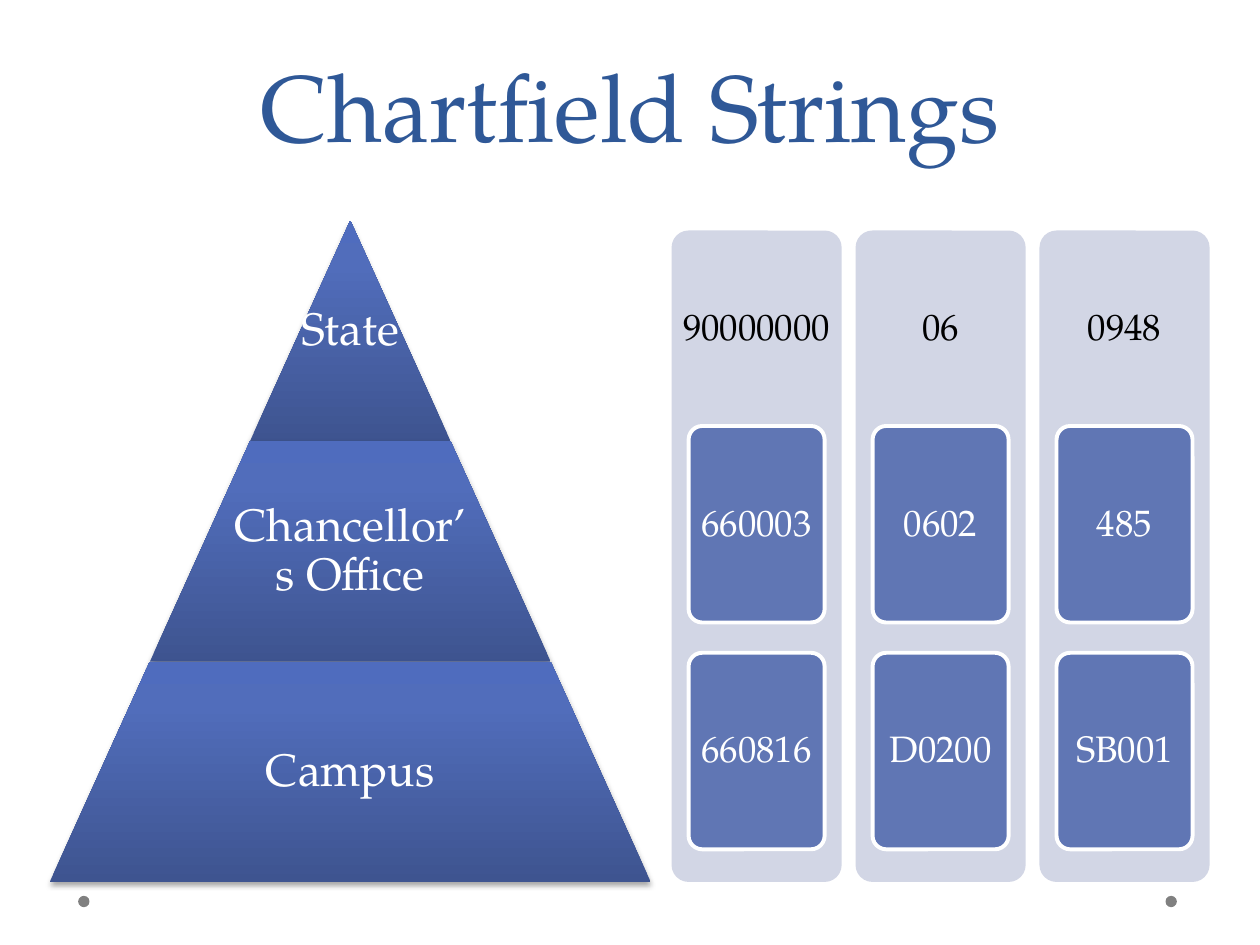
from lxml.etree import SubElement
from pptx import Presentation
from pptx.dml.color import RGBColor
from pptx.enum.shapes import MSO_SHAPE
from pptx.enum.text import MSO_ANCHOR, PP_ALIGN
from pptx.oxml.ns import qn
from pptx.util import Inches, Pt

TITLE_BLUE = RGBColor(0x2F, 0x58, 0x97)
CARD_BLUE = RGBColor(0x60, 0x76, 0xB4)
PALE_BLUE = RGBColor(0xD2, 0xD6, 0xE5)
GRAY = RGBColor(0x80, 0x80, 0x80)
WHITE = RGBColor(0xFF, 0xFF, 0xFF)
BLACK = RGBColor(0x00, 0x00, 0x00)
TIER_STOPS = (
    (0, RGBColor(0x3E, 0x54, 0x90)),
    (80, RGBColor(0x51, 0x6D, 0xBB)),
    (100, RGBColor(0x4F, 0x6C, 0xBE)),
)

TIERS = ("State", "Chancellor’s Office", "Campus")
STRINGS = (
    ("90000000", "660003", "660816"),
    ("06", "0602", "D0200"),
    ("0948", "485", "SB001"),
)


class SlideBuilder:
    """Holds the style and the current page, laid out on a 10 x 7.5 grid."""

    font = "TeX Gyre Pagella"
    columns, rows = 10, 7.5
    inset = Inches(0.04)

    def __init__(self, deck):
        self.page = deck.slides.add_slide(deck.slide_layouts[6])
        self.column = deck.slide_width / self.columns
        self.row = deck.slide_height / self.rows

    def place(self, left, top, width, height):
        return (int(left * self.column), int(top * self.row),
                int(width * self.column), int(height * self.row))

    def set_text(self, box, text, size, color, spacing=0.9):
        frame = box.text_frame
        frame.word_wrap = True
        frame.vertical_anchor = MSO_ANCHOR.MIDDLE
        frame.margin_left = frame.margin_right = self.inset
        frame.margin_top = frame.margin_bottom = self.inset
        para = frame.paragraphs[0]
        para.text = text
        para.alignment = PP_ALIGN.CENTER
        para.line_spacing = spacing
        para.font.name = self.font
        para.font.size = Pt(size)
        para.font.color.rgb = color

    def label(self, area, text, size, color, spacing=0.9):
        box = self.page.shapes.add_textbox(*self.place(*area))
        self.set_text(box, text, size, color, spacing)

    def shape(self, kind, area, fill=None, corner=None):
        shape = self.page.shapes.add_shape(kind, *self.place(*area))
        shape.shadow.inherit = False
        shape.line.fill.background()
        if fill is not None:
            shape.fill.solid()
            shape.fill.fore_color.rgb = fill
        if corner is not None:
            shape.adjustments[0] = corner
        return shape

    def panel(self, area):
        self.shape(MSO_SHAPE.ROUNDED_RECTANGLE, area, PALE_BLUE, 0.1)

    def card(self, area, text):
        card = self.shape(MSO_SHAPE.ROUNDED_RECTANGLE, area, CARD_BLUE, 0.1)
        card.line.color.rgb = WHITE
        card.line.width = Pt(2.25)
        self.set_text(card, text, 21, WHITE)

    def tier(self, area, slant):
        tier = self.shape(MSO_SHAPE.TRAPEZOID, area, corner=slant / min(area[2:]))
        tier.fill.gradient()
        tier.fill.gradient_angle = 90
        properties = tier._element.spPr
        # Three gradient stops
        stops = properties.find(".//" + qn("a:gsLst"))
        for stop in list(stops):
            stops.remove(stop)
        for percent, color in TIER_STOPS:
            stop = SubElement(stops, qn("a:gs"), pos=str(percent * 1000))
            SubElement(stop, qn("a:srgbClr"), val=str(color))
        # Soft shadow below
        shadow = SubElement(properties.find(qn("a:effectLst")), qn("a:outerShdw"),
                            blurRad="40000", dist="23000", dir="5400000", rotWithShape="0")
        black = SubElement(shadow, qn("a:srgbClr"), val=str(BLACK))
        SubElement(black, qn("a:alpha"), val="35000")


def main():
    deck = Presentation()
    deck.slide_width, deck.slide_height = Inches(10), Inches(7.5)
    builder = SlideBuilder(deck)

    # Footer dots and title
    for left in (9.25, 0.62):
        builder.shape(MSO_SHAPE.OVAL, (left, 7.11, 0.09, 0.09), GRAY)
    builder.label((0.5, 0, 9, 1.75), "Chartfield Strings", 54, TITLE_BLUE, Pt(58))

    # Pyramid: each tier is one tip width wider than the tier above
    center, height, tip = 2.78, 1.75, 1.59
    for index, text in enumerate(TIERS):
        width = tip * (index + 1)
        top = height * (index + 1)
        builder.tier((center - width / 2, top, width, height), tip / 2)
        text_width = max(tip, 0.65 * width)
        builder.label((center - text_width / 2, top, text_width, height), text, 26, WHITE)

    # Panels: a header in the top 30 percent, two cards below
    panel_top, panel_width, panel_height = 1.83, 1.35, 5.17
    header_height = 0.3 * panel_height
    card_width, card_height, card_step = 0.8 * panel_width, 1.56, 1.8
    for index, (header, *codes) in enumerate(STRINGS):
        left = 5.33 + 1.46 * index
        builder.panel((left, panel_top, panel_width, panel_height))
        builder.label((left, panel_top, panel_width, header_height), header, 21, BLACK)
        for position, code in enumerate(codes):
            card_top = panel_top + header_height + card_step * position
            builder.card((left + 0.1 * panel_width, card_top, card_width, card_height), code)

    deck.save("out.pptx")


if __name__ == "__main__":
    main()
